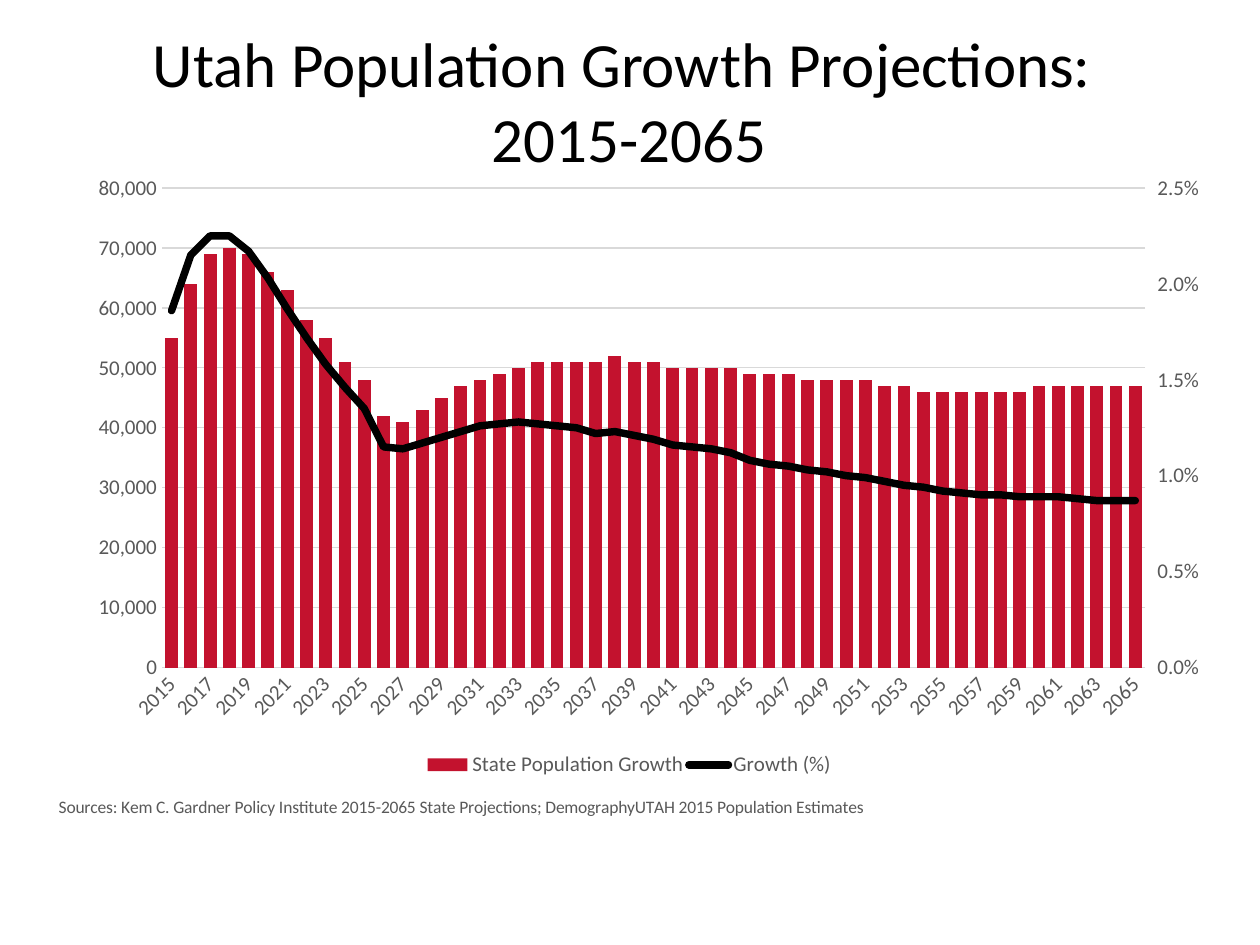
from copy import deepcopy

from lxml.etree import SubElement
from pptx import Presentation
from pptx.chart.axis import ValueAxis
from pptx.chart.data import CategoryChartData
from pptx.dml.color import RGBColor
from pptx.enum.chart import XL_CHART_TYPE, XL_LEGEND_POSITION, XL_MARKER_STYLE, XL_TICK_MARK
from pptx.enum.text import PP_ALIGN
from pptx.oxml import parse_xml
from pptx.oxml.ns import nsdecls, qn
from pptx.util import Cm, Pt

TITLE = ["Utah Population Growth Projections: ", "2015-2065"]
SOURCES = ("Sources: Kem C. Gardner Policy Institute 2015-2065 State Projections; "
           "DemographyUTAH 2015 Population Estimates")
YEARS = range(2015, 2066)
GROWTH_THOUSANDS = [
    55, 64, 69, 70, 69, 66, 63, 58, 55, 51, 48, 42, 41, 43, 45, 47, 48,
    49, 50, 51, 51, 51, 51, 52, 51, 51, 50, 50, 50, 50, 49, 49, 49, 48,
    48, 48, 48, 47, 47, 46, 46, 46, 46, 46, 46, 47, 47, 47, 47, 47, 47]
GROWTH_PERCENT = [
    1.86, 2.15, 2.25, 2.25, 2.17, 2.03, 1.87, 1.72, 1.58, 1.46, 1.35, 1.15, 1.14,
    1.17, 1.20, 1.23, 1.26, 1.27, 1.28, 1.27, 1.26, 1.25, 1.22, 1.23, 1.21, 1.19,
    1.16, 1.15, 1.14, 1.12, 1.08, 1.06, 1.05, 1.03, 1.02, 1.00, 0.99, 0.97, 0.95,
    0.94, 0.92, 0.91, 0.90, 0.90, 0.89, 0.89, 0.89, 0.88, 0.87, 0.87, 0.87]
COLORS = {"text": "000000", "label": "595959", "grid": "D9D9D9",
          "bar": "C3122E", "line": "000000"}
FONT = "Calibri"


def color(name):
    return RGBColor.from_string(COLORS[name])


def style_font(font, size, name):
    font.name = FONT
    font.size = Pt(size)
    font.bold = False
    font.color.rgb = color(name)


def add_text(slide, lines, left, top, width, height, size=12, name="text", align=PP_ALIGN.LEFT):
    box = slide.shapes.add_textbox(left, top, width, height)
    box.text_frame.word_wrap = True
    for number, line in enumerate(lines):
        para = box.text_frame.paragraphs[0] if number == 0 else box.text_frame.add_paragraph()
        para.alignment = align
        span = para.add_run()
        span.text = line
        style_font(span.font, size, name)


def place(parent, position, target=None, **percents):
    """Give a chart part a manual layout, in percent of the chart."""
    old = parent.find(qn("c:layout"))
    if old is not None:
        parent.remove(old)
    layout = parse_xml(f"<c:layout {nsdecls('c')}><c:manualLayout/></c:layout>")
    values = {"layoutTarget": target} if target else {}
    values.update(xMode="edge", yMode="edge")
    values.update({tag: round(percent / 100, 4) for tag, percent in percents.items()})
    for tag, value in values.items():
        SubElement(layout[0], qn(f"c:{tag}")).set("val", str(value))
    parent.insert(position, layout)


def style_axis(axis, maximum=None, step=None, number_format=None, tick=XL_TICK_MARK.NONE):
    style_font(axis.tick_labels.font, 12, "label")
    axis.major_tick_mark = tick
    axis.minor_tick_mark = XL_TICK_MARK.NONE
    if maximum:
        axis.minimum_scale, axis.maximum_scale, axis.major_unit = 0, maximum, step
        axis.tick_labels.number_format = number_format
        axis.tick_labels.number_format_is_linked = False
        axis.format.line.fill.background()


def move_to_right_axis(chart):
    """Turn the second column series into a line with its own value axis."""
    left_values = chart.value_axis._element
    bars = chart.plots[0]._element
    series = bars.findall(qn("c:ser"))[1]
    invert = series.find(qn("c:invertIfNegative"))
    if invert is not None:
        series.remove(invert)
    lines = parse_xml(
        f'<c:lineChart {nsdecls("c")}><c:grouping val="standard"/><c:varyColors val="0"/>'
        '<c:marker val="1"/><c:axId val="501"/><c:axId val="502"/></c:lineChart>')
    lines.insert(2, series)
    bars.addnext(lines)

    values, years = deepcopy(left_values), deepcopy(chart.category_axis._element)
    for axis, own, other in ((values, "502", "501"), (years, "501", "502")):
        axis.find(qn("c:axId")).set("val", own)
        axis.find(qn("c:crossAx")).set("val", other)
    years.find(qn("c:delete")).set("val", "1")
    values.find(qn("c:axPos")).set("val", "r")
    values.find(qn("c:crosses")).set("val", "max")
    left_values.addnext(values)
    values.addnext(years)
    return ValueAxis(values)


def add_growth_chart(slide, left, top, width, height):
    data = CategoryChartData()
    data.categories = [str(year) for year in YEARS]
    data.add_series("State Population Growth", [value * 1000 for value in GROWTH_THOUSANDS], "#,##0")
    data.add_series("Growth (%)", [round(value / 100, 4) for value in GROWTH_PERCENT], "0.0%")
    chart = slide.shapes.add_chart(
        XL_CHART_TYPE.COLUMN_CLUSTERED, left, top, width, height, data).chart
    style_font(chart.font, 12, "text")

    left_axis, years = chart.value_axis, chart.category_axis
    right_axis = move_to_right_axis(chart)
    right_axis.has_major_gridlines = False
    style_axis(left_axis, 80000, 10000, "#,##0")
    style_axis(right_axis, 0.025, 0.005, "0.0%", XL_TICK_MARK.OUTSIDE)
    style_axis(years)
    for rule in (left_axis.major_gridlines.format.line, years.format.line):
        rule.color.rgb = color("grid")
        rule.width = Pt(0.75)
    years._element.find(qn("c:txPr")).find(qn("a:bodyPr")).set("rot", "-2700000")
    skip = parse_xml(f'<c:tickLblSkip {nsdecls("c")} val="2"/>')
    years._element.find(qn("c:noMultiLvlLbl")).addprevious(skip)

    bars, lines = chart.plots
    bars.gap_width = 50
    bars.vary_by_categories = False
    fill = bars.series[0].format.fill
    fill.solid()
    fill.fore_color.rgb = color("bar")
    growth = lines.series[0]
    growth.smooth = False
    growth.marker.style = XL_MARKER_STYLE.NONE
    growth.format.line.color.rgb = color("line")
    growth.format.line.width = Pt(4.25)
    growth._element.find(qn("c:spPr")).find(qn("a:ln")).set("cap", "rnd")

    chart.has_legend = True
    chart.legend.position = XL_LEGEND_POSITION.BOTTOM
    chart.legend.include_in_layout = False
    style_font(chart.legend.font, 12, "label")

    chart.has_title = True
    span = chart.chart_title.text_frame.paragraphs[0].add_run()
    span.text = SOURCES
    style_font(span.font, 10, "label")

    place(chart.chart_title._element, 1, x=1.5, y=94.4)
    place(chart.legend._element, 1, x=32.5, y=87.5, w=35, h=5.5)
    place(bars._element.getparent(), 0, target="inner", x=10.5, y=4.5, w=83.1, h=71.3)


def main():
    deck = Presentation()
    deck.slide_width, deck.slide_height = Cm(25.4), Cm(19.05)
    page = deck.slides.add_slide(deck.slide_layouts[6])
    left, width = Cm(0.76), Cm(23.85)
    add_text(page, TITLE, left, Cm(0.36), width, Cm(3.33), size=36, align=PP_ALIGN.CENTER)
    add_growth_chart(page, left, Cm(3.18), width, Cm(13.56))
    deck.save("out.pptx")


if __name__ == "__main__":
    main()
